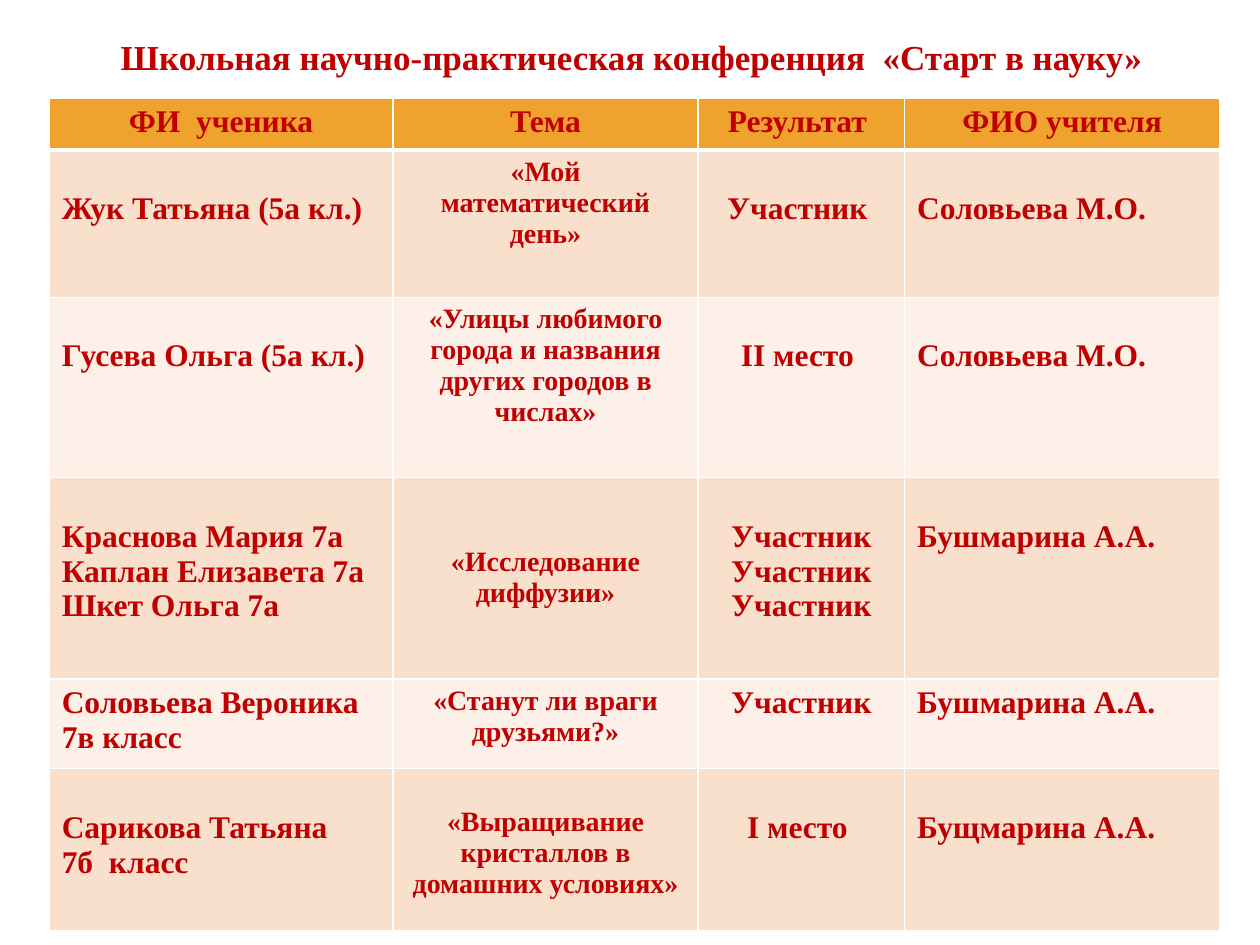
from pptx import Presentation
from pptx.dml.color import RGBColor
from pptx.enum.text import MSO_AUTO_SIZE, PP_ALIGN
from pptx.oxml import parse_xml
from pptx.oxml.ns import nsdecls
from pptx.util import Inches, Pt

THEME = {
    "font": "Times New Roman",
    "text": "C00000",
    "header": "F0A22E",
    "bands": ("F9E0CD", "FCF0E8"),
    "border": "FFFFFF",
    "title_size": 20,
    "body_size": 18,
    "topic_size": 16,
}

TITLE = "Школьная научно-практическая конференция  «Старт в науку»"
HEADERS = ["ФИ  ученика", "Тема", "Результат ", "ФИО учителя"]
ENTRIES = [
    (["Жук Татьяна (5а кл.)"], ["«Мой математический день»"],
     ["Участник "], ["Соловьева М.О."]),
    (["Гусева Ольга (5а кл.)"],
     ["«Улицы любимого города и названия других городов в числах»"],
     ["II место "], ["Соловьева М.О."]),
    (["Краснова Мария 7а", "Каплан Елизавета 7а", "Шкет Ольга 7а"],
     ["«Исследование диффузии»"], ["Участник"] * 3, ["Бушмарина А.А."]),
    (["Соловьева Вероника 7в класс"], ["«Станут ли враги друзьями?»"],
     ["Участник"], ["Бушмарина А.А."]),
    (["Сарикова Татьяна", "7б  класс"],
     ["«Выращивание кристаллов в домашних условиях»"],
     ["I место "], ["Бущмарина А.А."]),
]
LINES_ABOVE = [(1, 0, 1, 1), (1, 0, 1, 1), (1, 2, 1, 1), (0, 0, 0, 0), (1, 1, 1, 1)]
COLUMN_WIDTHS = [2.73, 2.42, 1.64, 2.5]
ROW_HEIGHTS = [0.41, 1.17, 1.43, 1.6, 0.71, 1.29]
TOPIC, RESULT = 1, 2
CELL_MARGIN = 0.05
LINE_SPACING = 1.12


def add_text(paragraph, text, size):
    run = paragraph.add_run()
    run.text = text
    run.font.name = THEME["font"]
    run.font.size = Pt(size)
    run.font.bold = True
    run.font.color.rgb = RGBColor.from_string(THEME["text"])


def set_borders(cell, bottom_width, top_width):
    properties = cell._tc.get_or_add_tcPr()
    widths = {"lnL": 1, "lnR": 1, "lnT": top_width, "lnB": bottom_width}
    for position, (side, width) in enumerate(widths.items()):
        properties.insert(position, parse_xml(
            f'<a:{side} {nsdecls("a")} w="{Pt(width)}"><a:solidFill>'
            f'<a:srgbClr val="{THEME["border"]}"/></a:solidFill></a:{side}>'))


def fill_cell(cell, lines, size, centered, color, lines_above=0):
    cell.fill.solid()
    cell.fill.fore_color.rgb = RGBColor.from_string(color)
    cell.margin_top = Inches(CELL_MARGIN + lines_above * size * LINE_SPACING / 72)
    frame = cell.text_frame
    for index, line in enumerate(lines):
        paragraph = frame.add_paragraph() if index else frame.paragraphs[0]
        paragraph.alignment = PP_ALIGN.CENTER if centered else PP_ALIGN.LEFT
        add_text(paragraph, line, size)


def add_title(slide):
    title = slide.shapes.add_textbox(Inches(0.86), Inches(0.23), Inches(8.38), Inches(0.44))
    title.text_frame.word_wrap = False
    title.text_frame.auto_size = MSO_AUTO_SIZE.SHAPE_TO_FIT_TEXT
    add_text(title.text_frame.paragraphs[0], TITLE, THEME["title_size"])


def add_results(slide):
    results = slide.shapes.add_table(
        len(ROW_HEIGHTS), len(COLUMN_WIDTHS), Inches(0.39), Inches(0.78),
        Inches(sum(COLUMN_WIDTHS)), Inches(sum(ROW_HEIGHTS))).table
    for column, width in zip(results.columns, COLUMN_WIDTHS):
        column.width = Inches(width)
    for row, height in zip(results.rows, ROW_HEIGHTS):
        row.height = Inches(height)

    for column, header in enumerate(HEADERS):
        cell = results.cell(0, column)
        fill_cell(cell, [header], THEME["body_size"], True, THEME["header"])
        set_borders(cell, bottom_width=3, top_width=1)

    for row, (entry, gaps) in enumerate(zip(ENTRIES, LINES_ABOVE), start=1):
        band = THEME["bands"][(row - 1) % 2]
        for column, (lines, gap) in enumerate(zip(entry, gaps)):
            cell = results.cell(row, column)
            size = THEME["topic_size" if column == TOPIC else "body_size"]
            fill_cell(cell, lines, size, column in (TOPIC, RESULT), band, gap)
            set_borders(cell, bottom_width=1, top_width=3 if row == 1 else 1)


def main():
    presentation = Presentation()
    presentation.slide_width = Inches(10)
    presentation.slide_height = Inches(7.5)
    slide = presentation.slides.add_slide(presentation.slide_layouts[6])
    add_title(slide)
    add_results(slide)
    presentation.save("out.pptx")


if __name__ == "__main__":
    main()
